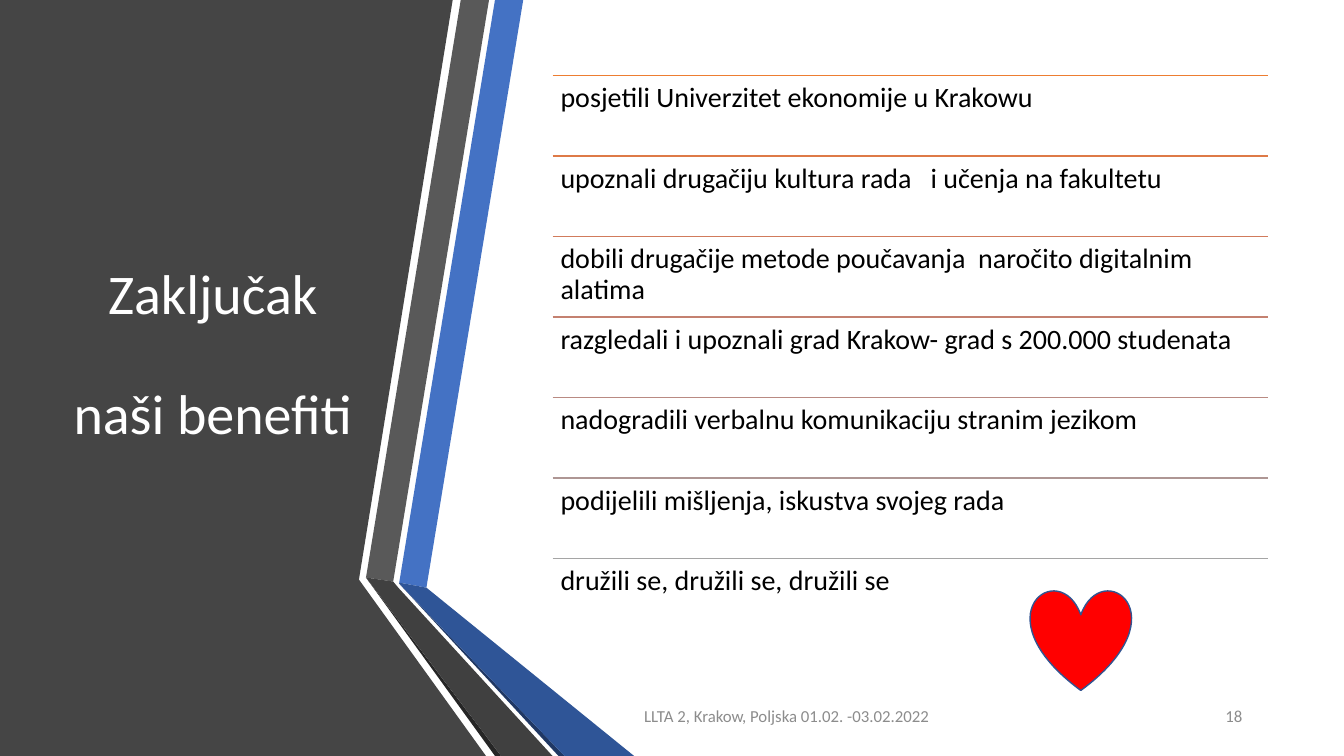
import pptx
import pptx.util
import pptx.dml.color
import pptx.enum.shapes
import pptx.enum.text
import lxml.etree

Inches, Pt = pptx.util.Inches, pptx.util.Pt
PP_ALIGN = pptx.enum.text.PP_ALIGN
ANCHOR = pptx.enum.text.MSO_ANCHOR

COLORS = {
    "panel": "454545", "blue": "4472C4", "blue_fold": "2F5597", "blue_edge": "203864",
    "gray": "595959", "gray_fold": "404040", "gray_edge": "262626",
    "title": "FFFFFF", "footer": "8C8C8C", "text": "000000",
    "heart": "FF0000", "heart_line": "325491",
}


def rgb(color):
    return pptx.dml.color.RGBColor.from_string(color)


def write(shape, lines, size, color, frame_format, paragraph_format):
    frame = shape.text_frame
    settings = {"word_wrap": True, "auto_size": pptx.enum.text.MSO_AUTO_SIZE.NONE}
    for name, value in (settings | frame_format).items():
        setattr(frame, name, value)
    for index, line in enumerate(lines):
        paragraph = frame.add_paragraph() if index else frame.paragraphs[0]
        paragraph.text = line
        for name, value in paragraph_format.items():
            setattr(paragraph, name, value)
        paragraph.font.name = "Calibri"
        paragraph.font.size = Pt(size)
        paragraph.font.color.rgb = rgb(color)


deck = pptx.Presentation()
deck.slide_width, deck.slide_height = Inches(13.33), Inches(7.5)
slide = deck.slides.add_slide(deck.slide_layouts[5])
shapes = slide.shapes

# Dark panel and folded ribbons
facets = [
    ("panel", [(0, 0), (4.49, 0), (3.56, 5.75), (4.82, 7.5), (0, 7.5)]),
    ("blue", [(3.96, 5.78), (4.23, 5.83), (5.19, 0), (4.91, 0)]),
    ("gray", [(4.85, 0), (4.57, 0), (3.63, 5.73), (3.9, 5.77)]),
    ("gray_edge", [(3.63, 5.73), (4.91, 7.5), (4.97, 7.5)]),
    ("blue_edge", [(3.96, 5.79), (5.54, 7.5), (5.6, 7.5)]),
    ("blue_fold", [(3.96, 5.79), (5.6, 7.5), (6.29, 7.5), (4.23, 5.83), (3.96, 5.78)]),
    ("gray_fold", [(5.48, 7.5), (3.95, 5.83), (3.9, 5.77), (3.63, 5.73), (4.97, 7.5)]),
]
for color, corners in facets:
    points = [(Inches(x), Inches(y)) for x, y in corners]
    builder = shapes.build_freeform(*points[0], scale=1.0)
    builder.add_line_segments(points[1:], close=True)
    facet = builder.convert_to_shape()
    facet.shadow.inherit = False
    facet.fill.solid()
    facet.fill.fore_color.rgb = rgb(COLORS[color])
    facet.line.fill.background()

# Title, brought in front of the panel
title = shapes.title
title.left, title.top, title.width, title.height = map(Inches, (0.59, 0.75, 3.04, 5.58))
write(title, ["Zaključak", "naši benefiti"], 40, COLORS["title"],
      {"vertical_anchor": ANCHOR.MIDDLE},
      {"alignment": PP_ALIGN.CENTER, "line_spacing": 0.9})
title.text_frame.paragraphs[1].space_before = Pt(42.5)
title.element.getparent().append(title.element)

# Footer and slide number
footers = [
    ("LLTA 2, Krakow, Poljska 01.02. -03.02.2022", 6.29, 4.26, PP_ALIGN.LEFT),
    ("18", 11.23, 1.19, PP_ALIGN.RIGHT),
]
for words, left, width, alignment in footers:
    footer = shapes.add_textbox(Inches(left), Inches(6.9), Inches(width), Inches(0.4))
    write(footer, [words], 12, COLORS["footer"],
          {"vertical_anchor": ANCHOR.MIDDLE}, {"alignment": alignment})

# Benefits, each under its own rule
benefits = [
    ("posjetili Univerzitet ekonomije u Krakowu", "ED7D31"),
    ("upoznali drugačiju kultura rada   i učenja na fakultetu", "DE7A47"),
    ("dobili drugačije metode poučavanja  naročito digitalnim alatima", "D17B5C"),
    ("razgledali i upoznali grad Krakow- grad s 200.000 studenata", "C48170"),
    ("nadogradili verbalnu komunikaciju stranim jezikom", "B98A82"),
    ("podijelili mišljenja, iskustva svojeg rada", "AE9694"),
    ("družili se, družili se, družili se", "A5A5A5"),
]
list_left, list_width = Inches(5.48), Inches(7.1)
first_top, last_top = Inches(0.75), Inches(5.54)
pitch = (last_top - first_top) // (len(benefits) - 1)
insets = {"margin_" + side: Inches(0.08) for side in ("left", "top", "right", "bottom")}
for row, (words, color) in enumerate(benefits):
    top = first_top + row * pitch
    rule = shapes.add_connector(pptx.enum.shapes.MSO_CONNECTOR.STRAIGHT,
                                list_left, top, list_left + list_width, top)
    rule.line.color.rgb = rgb(color)
    rule.line.width = Pt(1)
    lxml.etree.SubElement(rule.element.spPr, pptx.oxml.ns.qn("a:effectLst"))
    benefit = shapes.add_textbox(list_left, top, list_width, pitch)
    write(benefit, [words], 20, COLORS["text"], insets, {"line_spacing": 0.9})

# Heart
heart = shapes.add_shape(pptx.enum.shapes.MSO_SHAPE.HEART,
                         Inches(10.22), Inches(5.85), Inches(1), Inches(1))
heart.shadow.inherit = False
heart.fill.solid()
heart.fill.fore_color.rgb = rgb(COLORS["heart"])
heart.line.color.rgb = rgb(COLORS["heart_line"])
heart.line.width = Pt(1)

deck.save("out.pptx")
